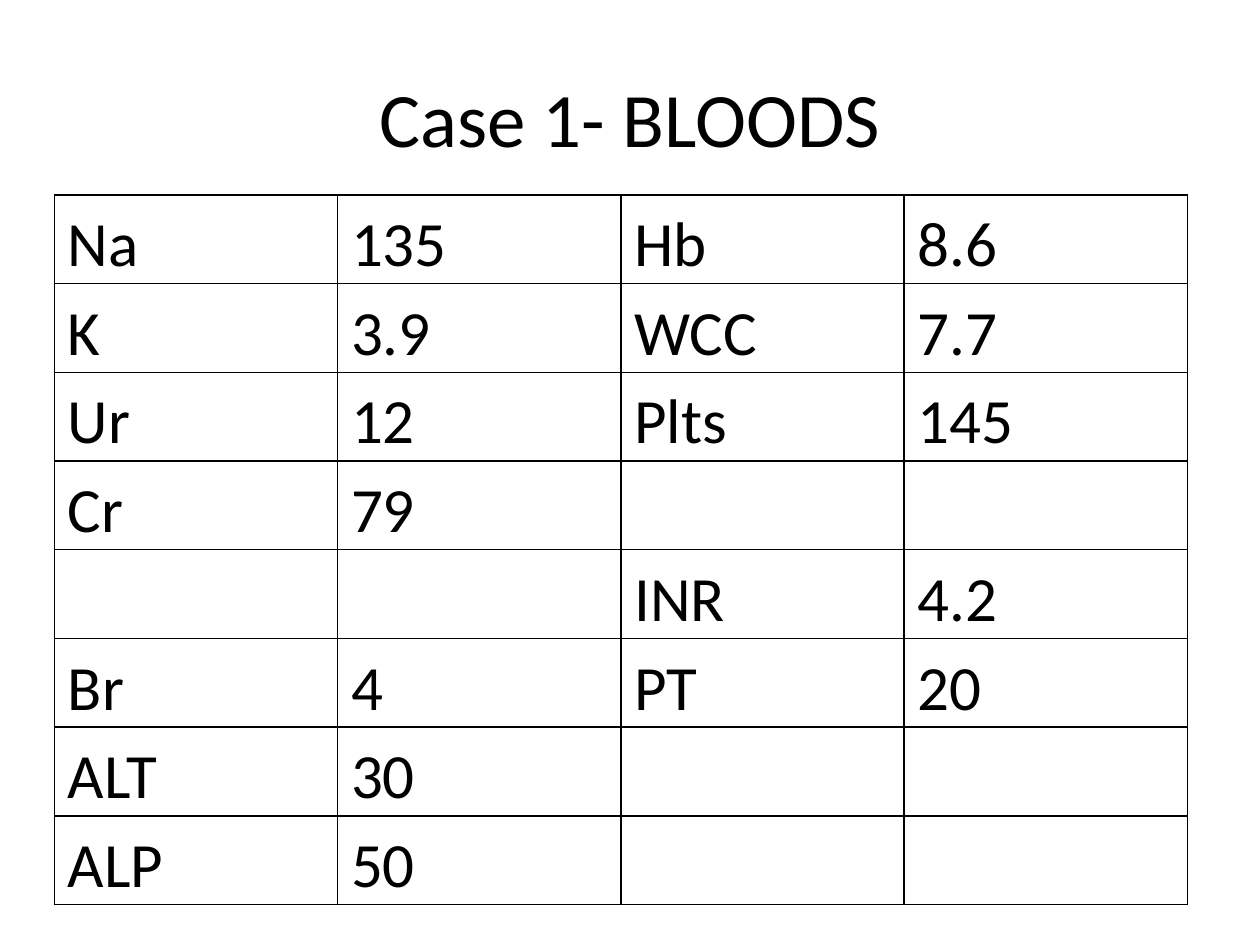
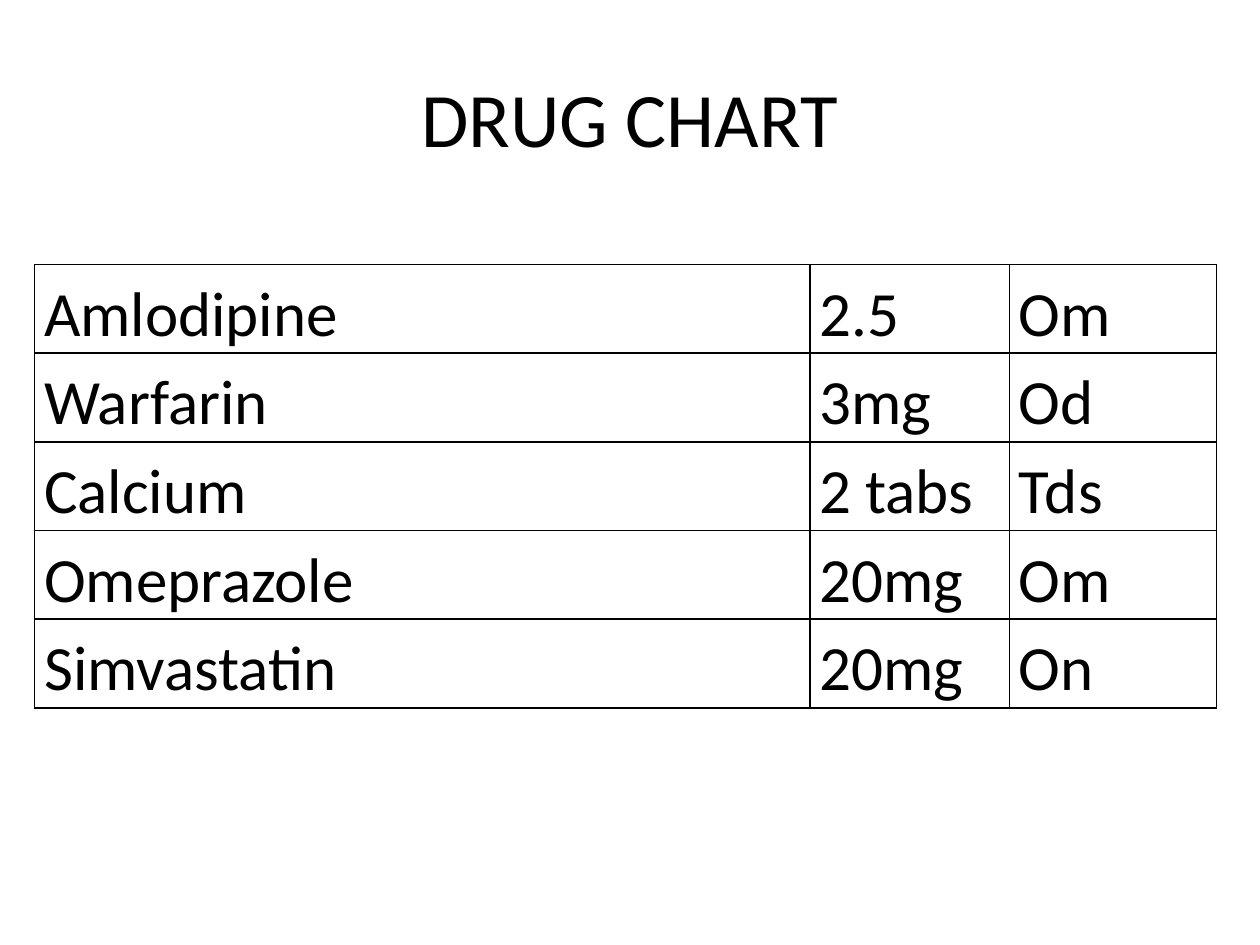
import dataclasses

import lxml.etree
import pptx
import pptx.dml.color
import pptx.enum.text
import pptx.oxml.ns
import pptx.presentation
import pptx.slide
import pptx.table
import pptx.text.text
import pptx.util

Pt = pptx.util.Pt

# Shared style
COLORS = {"paper": "FFFFFF", "ink": "000000"}
FONT = "Calibri"
HEAD_SIZE = 44
CELL_SIZE = 36
SPACING = 1.15
ROW_HIGH = 50.7
LINE = 1
HEAD_BOX = (36, 21.6, 648, 90)


@dataclasses.dataclass(frozen=True)
class Grid:
    left: float
    top: float
    inset: float
    widths: tuple[float, ...]
    rows: tuple[tuple[str, ...], ...]


@dataclasses.dataclass(frozen=True)
class Page:
    title: str
    grid: Grid


# Content
PAGES = (
    Page("Case 1- BLOODS", Grid(31, 111.4, 7.75, (161.9,) * 4, (
        ("Na", "135", "Hb", "8.6"),
        ("K", "3.9", "WCC", "7.7"),
        ("Ur", "12", "Plts", "145"),
        ("Cr", "79", "", ""),
        ("", "", "INR", "4.2"),
        ("Br", "4", "PT", "20"),
        ("ALT", "30", "", ""),
        ("ALP", "50", "", ""),
    ))),
    Page("DRUG CHART", Grid(19.8, 151.1, 5.4, (443, 114, 118.3), (
        ("Amlodipine", "2.5", "Om"),
        ("Warfarin", "3mg", "Od"),
        ("Calcium", "2 tabs", "Tds"),
        ("Omeprazole", "20mg", "Om"),
        ("Simvastatin", "20mg", "On"),
    ))),
)


def rgb(name: str) -> pptx.dml.color.RGBColor:
    return pptx.dml.color.RGBColor.from_string(COLORS[name])


def style(font: pptx.text.text.Font, size: float) -> None:
    font.name = FONT
    font.size = Pt(size)
    font.bold = False
    font.color.rgb = rgb("ink")


def add_head(slide: pptx.slide.Slide, text: str) -> None:
    head = slide.shapes.title
    head.left, head.top, head.width, head.height = map(Pt, HEAD_BOX)
    frame = head.text_frame
    frame.text = text
    frame.vertical_anchor = pptx.enum.text.MSO_ANCHOR.MIDDLE
    para = frame.paragraphs[0]
    para.alignment = pptx.enum.text.PP_ALIGN.CENTER
    style(para.runs[0].font, HEAD_SIZE)


def add_edges(cell: pptx.table._Cell) -> None:
    qn = pptx.oxml.ns.qn
    props = cell._tc.get_or_add_tcPr()
    for side in ("lnL", "lnR", "lnT", "lnB"):
        edge = lxml.etree.SubElement(props, qn(f"a:{side}"), w=str(Pt(LINE)))
        fill = lxml.etree.SubElement(edge, qn("a:solidFill"))
        lxml.etree.SubElement(fill, qn("a:srgbClr"), val=COLORS["ink"])


def fill_cell(cell: pptx.table._Cell, text: str, inset: float) -> None:
    cell.margin_left = cell.margin_right = Pt(inset)
    cell.margin_top = cell.margin_bottom = Pt(0)
    add_edges(cell)
    cell.fill.background()
    cell.text_frame.text = text
    para = cell.text_frame.paragraphs[0]
    para.line_spacing = SPACING
    for run in para.runs:
        style(run.font, CELL_SIZE)


def add_grid(slide: pptx.slide.Slide, grid: Grid) -> None:
    count = len(grid.rows)
    table = slide.shapes.add_table(
        count, len(grid.widths), Pt(grid.left), Pt(grid.top),
        Pt(sum(grid.widths)), Pt(count * ROW_HIGH)).table
    table.first_row = table.horz_banding = False
    for col, width in zip(table.columns, grid.widths):
        col.width = Pt(width)
    for row, texts in zip(table.rows, grid.rows):
        row.height = Pt(ROW_HIGH)
        for cell, text in zip(row.cells, texts):
            fill_cell(cell, text, grid.inset)


def add_page(deck: pptx.presentation.Presentation, page: Page) -> None:
    slide = deck.slides.add_slide(deck.slide_layouts.get_by_name("Title Only"))
    back = slide.background.fill
    back.solid()
    back.fore_color.rgb = rgb("paper")
    add_head(slide, page.title)
    add_grid(slide, page.grid)


def main() -> None:
    deck = pptx.Presentation()
    deck.slide_width, deck.slide_height = Pt(720), Pt(540)
    for page in PAGES:
        add_page(deck, page)
    deck.save("out.pptx")


if __name__ == "__main__":
    main()
